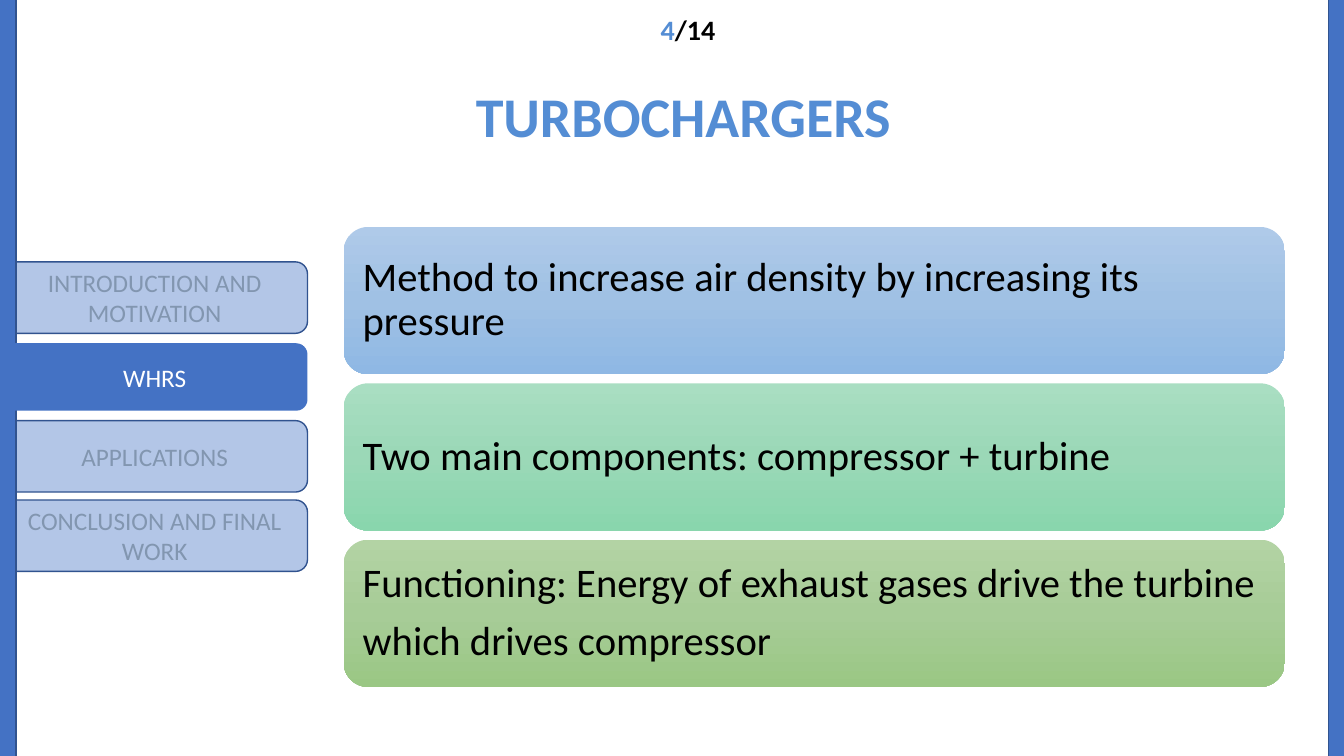
import copy
from dataclasses import dataclass

import pptx
import pptx.dml.color
import pptx.enum.shapes
import pptx.enum.text
import pptx.oxml.ns
import pptx.util
from pptx.util import Cm, Pt

Align = pptx.enum.text.PP_ALIGN
Anchor = pptx.enum.text.MSO_ANCHOR
ShapeType = pptx.enum.shapes.MSO_SHAPE


@dataclass(frozen=True)
class Theme:
    font: str = "Calibri"
    accent: str = "548DD4"
    bar: str = "4472C4"
    outline: str = "31538F"
    faded: str = "B3C6E7"
    faded_text: str = "8296B0"
    white: str = "FFFFFF"
    black: str = "000000"
    title_size: float = 40
    card_size: float = 29
    page_size: float = 20
    tab_size: float = 18


@dataclass(frozen=True)
class Box:
    """A rectangle in centimetres."""
    left: float
    top: float
    width: float
    height: float

    def lengths(self) -> tuple:
        return Cm(self.left), Cm(self.top), Cm(self.width), Cm(self.height)


@dataclass(frozen=True)
class Tab:
    label: str
    active: bool = False


@dataclass(frozen=True)
class Card:
    lines: tuple
    gradient: tuple


THEME = Theme()
TITLE = Box(0.48, 1.93, 33.48, 2.21)
PAGE_NUMBER = Box(11.61, 0.2, 11.46, 1.12)
LEFT_BAR = Box(-0.05, -0.48, 0.46, 20.6)
RIGHT_BAR = Box(33.48, -0.79, 0.46, 20.6)
FIRST_TAB_MIDDLE, TAB_PITCH = 7.5, 2.0
FIRST_CARD_TOP, CARD_PITCH = 5.72, 3.94
CORNER = 0.167

TABS = (
    Tab("INTRODUCTION AND MOTIVATION"),
    Tab("WHRS", active=True),
    Tab("APPLICATIONS"),
    Tab("CONCLUSION AND FINAL WORK"),
)
CARDS = (
    Card(("Method to increase air density by increasing its pressure",),
         ("AFCAE9", "A0C1E4", "8FB8E4")),
    Card(("Two main components: compressor + turbine",),
         ("A9DEC2", "9BD8B7", "89D6AD")),
    Card(("Functioning: Energy of exhaust gases drive the turbine",
          "which drives compressor"),
         ("B3D3A4", "A7CC97", "9AC784")),
)


def rgb(code: str):
    return pptx.dml.color.RGBColor.from_string(code)


def style(paragraph, size: float, color: str, align, bold: bool = False) -> None:
    paragraph.alignment = align
    font = paragraph.font
    font.name, font.size, font.bold = THEME.font, Pt(size), bold
    font.color.rgb = rgb(color)


def add_block(slide, kind, box: Box, fill: str = "", outline: str = ""):
    """Add a shadowless shape; an empty colour leaves that part off."""
    block = slide.shapes.add_shape(kind, *box.lengths())
    block.shadow.inherit = False
    if fill:
        block.fill.solid()
        block.fill.fore_color.rgb = rgb(fill)
    if outline:
        block.line.color.rgb = rgb(outline)
        block.line.width = Pt(1)
    else:
        block.line.fill.background()
    if kind == ShapeType.ROUNDED_RECTANGLE:
        block.adjustments[0] = CORNER
    frame = block.text_frame
    frame.word_wrap = True
    frame.vertical_anchor = Anchor.MIDDLE
    return block


def add_title(slide) -> None:
    title = slide.shapes.title
    title.left, title.top, title.width, title.height = TITLE.lengths()
    title.fill.solid()
    title.fill.fore_color.rgb = rgb(THEME.white)
    frame = title.text_frame
    frame.text = "TURBOCHARGERS"
    frame.auto_size = pptx.enum.text.MSO_AUTO_SIZE.NONE
    frame.vertical_anchor = Anchor.TOP
    style(frame.paragraphs[0], THEME.title_size, THEME.accent, Align.CENTER, bold=True)


def add_page_number(slide) -> None:
    frame = slide.shapes.add_textbox(*PAGE_NUMBER.lengths()).text_frame
    frame.word_wrap = True
    paragraph = frame.paragraphs[0]
    style(paragraph, THEME.page_size, THEME.black, Align.CENTER, bold=True)
    for part, color in (("4", THEME.accent), ("/14", THEME.black)):
        run = paragraph.add_run()
        run.text = part
        run.font.color.rgb = rgb(color)


def add_tab(slide, row: int, tab: Tab) -> None:
    height = 1.7 if tab.active else 1.8
    box = Box(0.05, FIRST_TAB_MIDDLE + row * TAB_PITCH - height / 2, 7.7, height)
    fill, outline, color = (
        (THEME.bar, "", THEME.white) if tab.active
        else (THEME.faded, THEME.outline, THEME.faded_text))
    frame = add_block(slide, ShapeType.ROUNDED_RECTANGLE, box, fill, outline).text_frame
    frame.text = tab.label
    style(frame.paragraphs[0], THEME.tab_size, color, Align.CENTER)


def fill_downwards(block, colors: tuple) -> None:
    """Fill with evenly spaced colours from top to bottom."""
    block.fill.gradient()
    block.fill.gradient_angle = 270
    stop_list = next(block.element.iter(pptx.oxml.ns.qn("a:gsLst")))
    while len(stop_list) < len(colors):
        stop_list.append(copy.deepcopy(stop_list[0]))
    for index, (stop, color) in enumerate(zip(block.fill.gradient_stops, colors)):
        stop.position = index / (len(colors) - 1)
        stop.color.rgb = rgb(color)


def add_card(slide, row: int, card: Card) -> None:
    box = Box(8.66, FIRST_CARD_TOP + row * CARD_PITCH, 23.72, 3.71)
    block = add_block(slide, ShapeType.ROUNDED_RECTANGLE, box)
    fill_downwards(block, card.gradient)
    frame = block.text_frame
    frame.margin_left = frame.margin_right = Cm(0.3)
    frame.margin_top = frame.margin_bottom = Cm(0.3)
    frame.text = "\n".join(card.lines)
    for index, paragraph in enumerate(frame.paragraphs):
        style(paragraph, THEME.card_size, THEME.black, Align.LEFT)
        paragraph.line_spacing = 0.9
        paragraph.space_before = Pt(10.2 if index else 0)


def main() -> None:
    deck = pptx.Presentation()
    deck.slide_width, deck.slide_height = Cm(33.87), Cm(19.05)
    slide = deck.slides.add_slide(deck.slide_layouts.get_by_name("Title Only"))
    add_title(slide)
    # The left bar covers the faded tabs; the active tab lies over the bar.
    rows = list(enumerate(TABS))
    for row, tab in rows:
        if not tab.active:
            add_tab(slide, row, tab)
    for bar in (LEFT_BAR, RIGHT_BAR):
        add_block(slide, ShapeType.RECTANGLE, bar, THEME.bar, THEME.outline)
    for row, tab in rows:
        if tab.active:
            add_tab(slide, row, tab)
    add_page_number(slide)
    for row, card in enumerate(CARDS):
        add_card(slide, row, card)
    deck.save("out.pptx")


if __name__ == "__main__":
    main()
